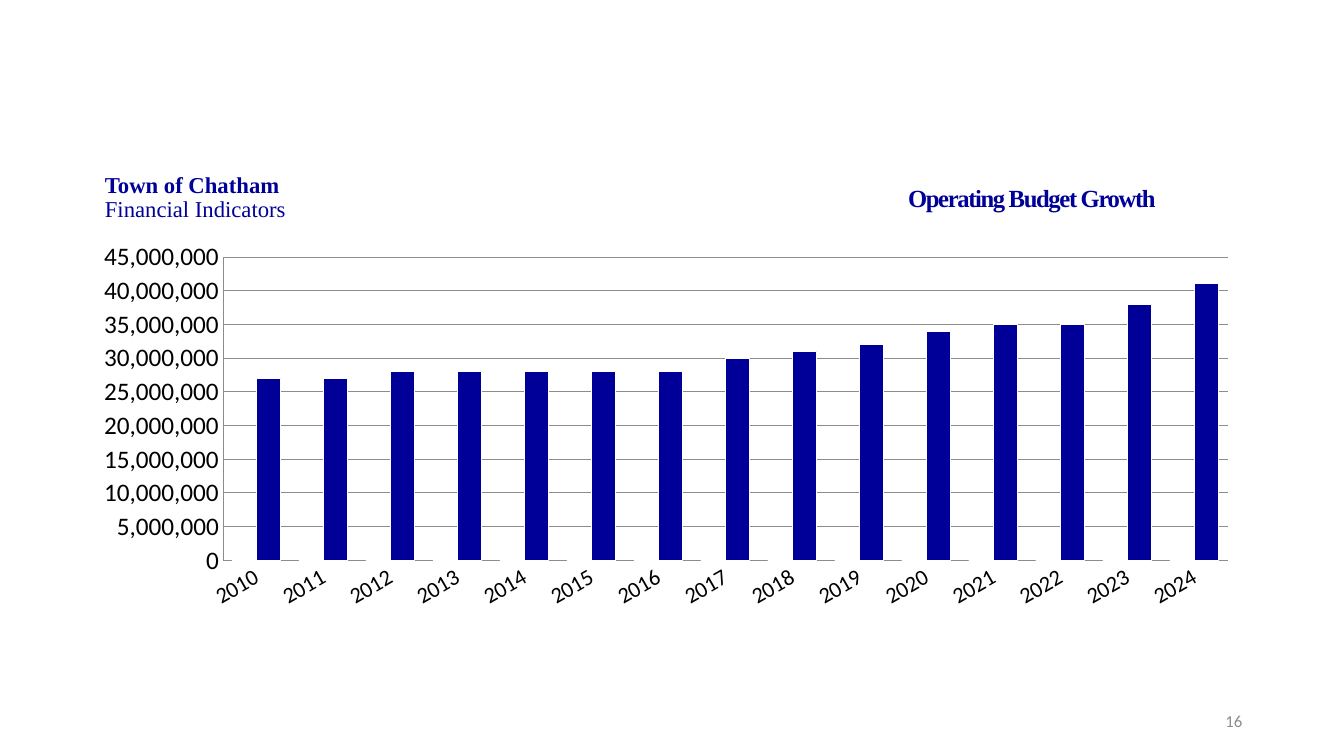
from dataclasses import dataclass

from lxml import etree
from pptx import Presentation
from pptx import util as u
from pptx.chart.data import CategoryChartData
from pptx.dml.color import RGBColor
from pptx.enum import chart as ch, shapes, text
from pptx.oxml import parse_xml
from pptx.oxml.ns import nsdecls, qn

NAVY, GRAY, WHITE, BLACK, ORANGE = "000099", "8C8C8C", "FFFFFF", "000000", "ED7D31"
SERIF, SANS = "Times New Roman", "Calibri"


@dataclass
class BudgetSeries:
    name: str
    millions: list[int]
    color: str


YEARS = [str(year) for year in range(2010, 2025)]
SERIES = [
    BudgetSeries("Series 1", [0] * len(YEARS), ORANGE),
    BudgetSeries("Series 2", [27, 27, 28, 28, 28, 28, 28, 30,
                              31, 32, 34, 35, 35, 38, 41], NAVY),
]


def rgb(value: str) -> RGBColor:
    return RGBColor.from_string(value)


def set_font(font, name: str, size: float, color: str, bold: bool = False) -> None:
    font.name, font.size, font.bold = name, u.Pt(size), bold
    font.color.rgb = rgb(color)


def set_line(line, color: str) -> None:
    line.color.rgb = rgb(color)
    line.width = u.Pt(0.5)


def box(left: float, top: float, width: float, height: float) -> list[int]:
    return [u.Inches(v) for v in (left, top, width, height)]


def right_text(sp, value: str):
    """Write one right-aligned, vertically centred line and return its run."""
    tf = sp.text_frame
    tf.text = value
    tf.word_wrap = True
    tf.vertical_anchor = text.MSO_ANCHOR.MIDDLE
    p = tf.paragraphs[0]
    p.alignment = text.PP_ALIGN.RIGHT
    return p.runs[0]


def add_title(s) -> None:
    sp = s.shapes.title
    sp.left, sp.top, sp.width, sp.height = box(0.94, 1.75, 11.22, 0.43)
    tf = sp.text_frame
    tf.text = "Town of Chatham\vFinancial Indicators"
    tf.auto_size = text.MSO_AUTO_SIZE.NONE
    tf.vertical_anchor = text.MSO_ANCHOR.MIDDLE
    p = tf.paragraphs[0]
    p.alignment = text.PP_ALIGN.LEFT
    p.line_spacing = 0.9
    for r, bold in zip(p.runs, (True, False)):
        set_font(r.font, SERIF, 16.2, NAVY, bold)


def add_heading(s) -> None:
    sp = s.shapes.add_shape(shapes.MSO_SHAPE.RECTANGLE, *box(5.58, 1.75, 5.98, 0.42))
    sp.shadow.inherit = False
    sp.fill.solid()
    sp.fill.fore_color.rgb = rgb(WHITE)
    sp.line.fill.background()
    r = right_text(sp, "Operating Budget Growth")
    set_font(r.font, SERIF, 17.6, NAVY, True)
    r.font._element.set("spc", "-100")


def add_budget_chart(s) -> None:
    data = CategoryChartData(number_format="#,##0")
    data.categories = YEARS
    for series in SERIES:
        data.add_series(series.name, [v * 1_000_000 for v in series.millions])
    chart = s.shapes.add_chart(ch.XL_CHART_TYPE.COLUMN_CLUSTERED,
                               *box(0.82, 2.32, 11.59, 3.81), data).chart
    chart.has_legend = chart.has_title = False
    set_font(chart.font, SANS, 18, BLACK)

    # Bars
    plot = chart.plots[0]
    plot.gap_width, plot.overlap, plot.vary_by_categories = 76, 0, False
    for drawn, series in zip(plot.series, SERIES):
        drawn.format.fill.solid()
        drawn.format.fill.fore_color.rgb = rgb(series.color)
        set_line(drawn.format.line, WHITE)

    # Axes
    for axis, size in ((chart.category_axis, 16), (chart.value_axis, 18)):
        axis.major_tick_mark = axis.minor_tick_mark = ch.XL_TICK_MARK.NONE
        set_font(axis.tick_labels.font, SANS, size, BLACK)
        set_line(axis.format.line, GRAY)
    labels = chart.category_axis._element.find(qn("c:txPr"))
    labels.find(qn("a:bodyPr")).set("rot", "-1800000")
    values = chart.value_axis
    values.minimum_scale, values.maximum_scale, values.major_unit = 0, 45e6, 5e6
    values.tick_labels.number_format = "#,##0"
    values.tick_labels.number_format_is_linked = False
    values.has_major_gridlines = True
    set_line(values.major_gridlines.format.line, GRAY)

    # Plot area position and fill
    area = chart._chartSpace.chart.plotArea
    for old in area.findall(qn("c:layout")):
        area.remove(old)
    layout = etree.Element(qn("c:layout"))
    manual = etree.SubElement(layout, qn("c:manualLayout"))
    for tag, value in (("layoutTarget", "inner"), ("xMode", "edge"), ("yMode", "edge"),
                       ("x", "0.12"), ("y", "0.06"), ("w", "0.86"), ("h", "0.79")):
        etree.SubElement(manual, qn(f"c:{tag}")).set("val", value)
    area.insert(0, layout)
    area.append(parse_xml(f'<c:spPr {nsdecls("c", "a")}><a:solidFill>'
                          f'<a:srgbClr val="{WHITE}"/></a:solidFill></c:spPr>'))


def main() -> None:
    prs = Presentation()
    prs.slide_width, prs.slide_height = u.Inches(13.33), u.Inches(7.5)
    s = prs.slides.add_slide(prs.slide_layouts[5])

    # Page number
    sp = s.shapes.add_textbox(*box(9.42, 6.95, 3, 0.4))
    set_font(right_text(sp, "16").font, SANS, 12, GRAY)

    # Headings and chart
    add_title(s)
    add_heading(s)
    add_budget_chart(s)
    prs.save("out.pptx")


if __name__ == "__main__":
    main()
